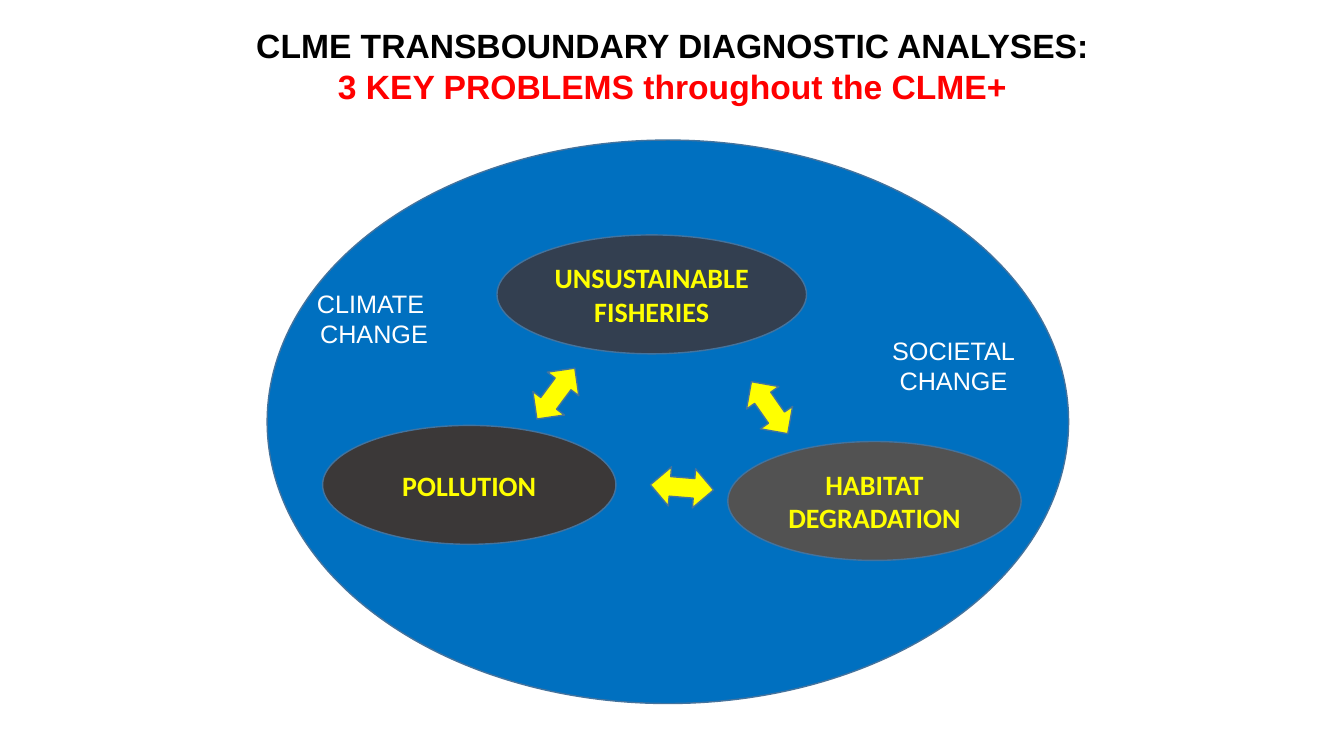
import pptx
import pptx.dml.color
import pptx.enum.shapes
import pptx.enum.text
import pptx.util

THEME = {
    "ocean": "0070C0", "outline": "43739E", "accent": "FFFF00",
    "fisheries": "333F50", "pollution": "3B3838", "habitat": "525252",
    "title": "000000", "alert": "FF0000", "driver": "FFFFFF",
    "title_size": 24, "problem_size": 20, "driver_size": 18,
    "heading_font": "Arial", "problem_font": "Calibri",
}
KINDS = pptx.enum.shapes.MSO_SHAPE

deck = pptx.Presentation()
deck.slide_width = pptx.util.Inches(13.33)
deck.slide_height = pptx.util.Inches(7.5)
page = deck.slides.add_slide(deck.slide_layouts[6])

# The slide is a grid of 100 columns by 100 rows
column = deck.slide_width / 100
row = deck.slide_height / 100


def add_figure(kind, left, top, width, height, fill):
    figure = page.shapes.add_shape(kind, round(left * column), round(top * row),
                                   round(width * column), round(height * row))
    figure.shadow.inherit = False
    figure.fill.solid()
    figure.fill.fore_color.rgb = pptx.dml.color.RGBColor.from_string(THEME[fill])
    figure.line.color.rgb = pptx.dml.color.RGBColor.from_string(THEME["outline"])
    figure.line.width = pptx.util.Pt(1)
    return figure


def write_lines(box, lines, font, size, bold):
    frame = box.text_frame
    frame.word_wrap = True
    for index, (text, color) in enumerate(lines):
        para = frame.add_paragraph() if index else frame.paragraphs[0]
        para.alignment = pptx.enum.text.PP_ALIGN.CENTER
        span = para.add_run()
        span.text = text
        span.font.name = THEME[font]
        span.font.size = pptx.util.Pt(THEME[size])
        span.font.bold = bold
        span.font.color.rgb = pptx.dml.color.RGBColor.from_string(THEME[color])


# Ocean backdrop
add_figure(KINDS.OVAL, 19.88, 18.53, 59.63, 74.53, "ocean")

# The three key problems
problems = [
    ("HABITAT DEGRADATION", 54.15, 58.4, 21.83, "habitat"),
    ("UNSUSTAINABLE FISHERIES", 36.98, 31.07, 23.03, "fisheries"),
    ("POLLUTION", 24, 56.27, 21.83, "pollution"),
]
for text, left, top, width, fill in problems:
    oval = add_figure(KINDS.OVAL, left, top, width, 15.73, fill)
    oval.text_frame.vertical_anchor = pptx.enum.text.MSO_ANCHOR.MIDDLE
    write_lines(oval, [(text, "accent")], "problem_font", "problem_size", True)

# Two-way arrows between the problems, placed by their centres
arrow_width, arrow_height = 2.93, 8.4
for center_x, center_y, angle in [(41.36, 52.07, 36.7), (57.26, 53.93, 325.1),
                                  (50.74, 64.47, 94.7)]:
    arrow = add_figure(KINDS.UP_DOWN_ARROW, center_x - arrow_width / 2,
                       center_y - arrow_height / 2, arrow_width, arrow_height, "accent")
    arrow.rotation = angle

# Outside drivers and the title
captions = [
    (18.68, 37.47, 18.3, 9.47, [("CLIMATE ", "driver"), ("CHANGE", "driver")],
     "driver_size", False),
    (61.8, 43.73, 18.3, 9.47, [("SOCIETAL", "driver"), ("CHANGE", "driver")],
     "driver_size", False),
    (15.75, 2.67, 68.55, 12.13,
     [("CLME TRANSBOUNDARY DIAGNOSTIC ANALYSES:", "title"),
      ("3 KEY PROBLEMS throughout the CLME+", "alert")], "title_size", True),
]
for left, top, width, height, lines, size, bold in captions:
    box = page.shapes.add_textbox(round(left * column), round(top * row),
                                  round(width * column), round(height * row))
    box.text_frame.auto_size = pptx.enum.text.MSO_AUTO_SIZE.SHAPE_TO_FIT_TEXT
    write_lines(box, lines, "heading_font", size, bold)

deck.save("out.pptx")
